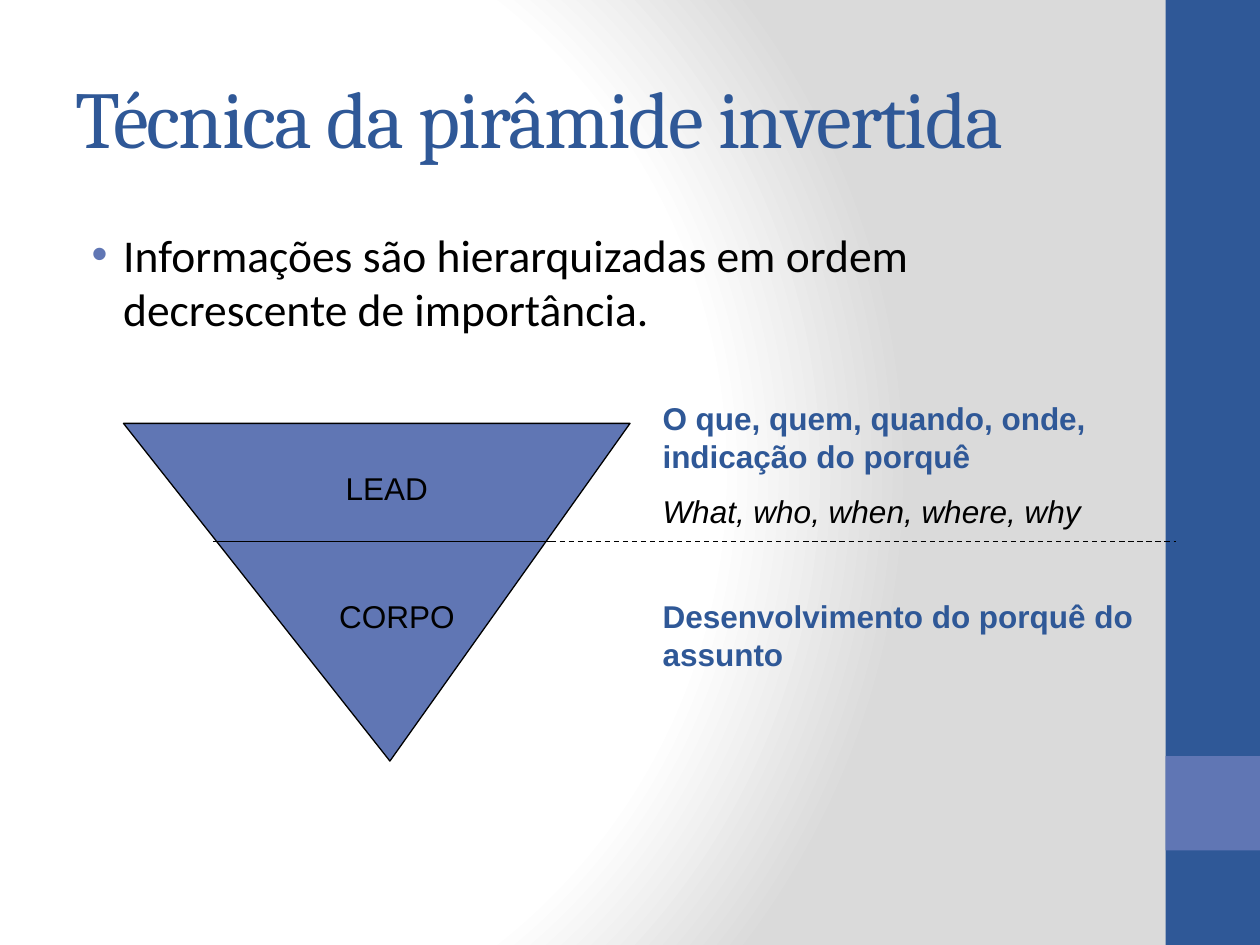
from lxml import etree
from pptx import Presentation
from pptx.dml.color import RGBColor
from pptx.enum import dml, shapes, text
from pptx.oxml import parse_xml
from pptx.oxml.ns import nsdecls, qn
from pptx.util import Inches, Pt

NAVY, BLUE, BLACK = "2F5897", "6076B4", "000000"
LEFT, MID = text.PP_ALIGN.LEFT, text.PP_ALIGN.CENTER


def rgb(code):
    """Turn a hex string into a colour."""
    return RGBColor.from_string(code)


def place(item, x, y, w, h):
    """Move and size a shape, in inches."""
    item.left, item.top = Inches(x), Inches(y)
    item.width, item.height = Inches(w), Inches(h)


def shade(slide):
    """Give the slide its radial background."""
    stops = "".join(
        f'<a:gs pos="{pos}000"><a:srgbClr val="{code}"/></a:gs>'
        for pos, code in ((0, "FFFFFF"), (75, "FFFFFF"), (100, "DADADA")))
    slide.element.cSld.insert(0, parse_xml(
        f'<p:bg {nsdecls("p", "a")}><p:bgPr><a:gradFill rotWithShape="1">'
        f'<a:gsLst>{stops}</a:gsLst><a:path path="circle">'
        '<a:fillToRect l="20000" t="50000" r="100000" b="50000"/></a:path>'
        '</a:gradFill><a:effectLst/></p:bgPr></p:bg>'))


def style(para, size, face, code, bold=False, italic=False):
    """Format every run of a paragraph."""
    for run in para.runs:
        font = run.font
        font.size, font.name = Pt(size), face
        font.bold, font.italic = bold, italic
        font.color.rgb = rgb(code)


def block(slide, kind, x, y, w, h, code):
    """Add a plain filled shape."""
    item = slide.shapes.add_shape(kind, 0, 0, 0, 0)
    place(item, x, y, w, h)
    item.shadow.inherit = False
    item.fill.solid()
    item.fill.fore_color.rgb = rgb(code)
    item.line.fill.background()
    return item


def rule(slide, x, end, y, dash=None):
    """Add a thin level line."""
    line = slide.shapes.add_connector(
        shapes.MSO_CONNECTOR.STRAIGHT, Inches(x), Inches(y), Inches(end), Inches(y))
    line.line.color.rgb = rgb(BLACK)
    line.line.width = Pt(0.75)
    line.line.dash_style = dash
    etree.SubElement(line.element.spPr, qn("a:effectLst"))


def label(slide, x, y, w, h, lines, align=LEFT):
    """Add a text box, one paragraph for each line and its style."""
    box = slide.shapes.add_textbox(0, 0, 0, 0)
    place(box, x, y, w, h)
    frame = box.text_frame
    frame.word_wrap = True
    frame.text = "\n".join(line for line, _ in lines)
    for para, (_, look) in zip(frame.paragraphs, lines):
        para.alignment = align
        style(para, *look)
    for para in frame.paragraphs[1:]:
        para.space_before = Pt(10)
    return frame


def bullet(para, code):
    """Hang a coloured bullet on a paragraph."""
    props = para._p.get_or_add_pPr()
    props.set("marL", str(Inches(0.38)))
    props.set("indent", str(Inches(-0.25)))
    tint = etree.SubElement(props, qn("a:buClr"))
    etree.SubElement(tint, qn("a:srgbClr"), val=code)
    etree.SubElement(props, qn("a:buFont"), typeface="Arial")
    etree.SubElement(props, qn("a:buChar"), char="•")


def head(slide, words):
    """Fill and format the title."""
    title = slide.shapes.title
    place(title, 0.5, 0.3, 8.33, 1.25)
    frame = title.text_frame
    frame.text = words
    frame.vertical_anchor = text.MSO_ANCHOR.MIDDLE
    para = frame.paragraphs[0]
    para.alignment = LEFT
    style(para, 46, "Cambria", NAVY)
    para.runs[0].font._element.set("spc", "-100")


def main():
    """Build the inverted pyramid slide."""
    deck = Presentation()
    deck.slide_width, deck.slide_height = Inches(10), Inches(7.5)
    slide = deck.slides.add_slide(deck.slide_layouts[5])
    shade(slide)
    kinds = shapes.MSO_SHAPE
    block(slide, kinds.RECTANGLE, 9.25, 0, 0.75, 7.5, NAVY)
    block(slide, kinds.RECTANGLE, 9.25, 6, 0.75, 0.75, BLUE)
    head(slide, "Técnica da pirâmide invertida")
    body = label(slide, 0.5, 1.75, 8.33, 5.25, [
        ("Informações são hierarquizadas em ordem decrescente de importância.",
         (26, "Calibri", BLACK))])
    bullet(body.paragraphs[0], BLUE)

    cone = block(slide, kinds.ISOSCELES_TRIANGLE, 0.98, 3.36, 4.02, 2.68, BLUE)
    cone.rotation = 180
    cone.adjustments[0] = 0.474
    cone.line.color.rgb = rgb(BLACK)
    cone.line.width = Pt(0.75)
    rule(slide, 1.69, 4.37, 4.3)
    rule(slide, 4.37, 9.33, 4.3, dml.MSO_LINE.DASH)

    plain = (18, "Arial", BLACK)
    strong = (18, "Arial", NAVY, True)
    slant = (18, "Arial", BLACK, False, True)
    label(slide, 2.48, 3.67, 1.18, 0.4, [("LEAD", plain)], MID)
    label(slide, 2.48, 4.69, 1.34, 0.4, [("CORPO", plain)], MID)
    label(slide, 5.16, 3.12, 4.25, 1.16, [
        ("O que, quem, quando, onde, indicação do porquê", strong),
        ("What, who, when, where, why", slant)])
    label(slide, 5.16, 4.69, 4.25, 0.7,
          [("Desenvolvimento do porquê do assunto", strong)])
    deck.save("out.pptx")


if __name__ == "__main__":
    main()
